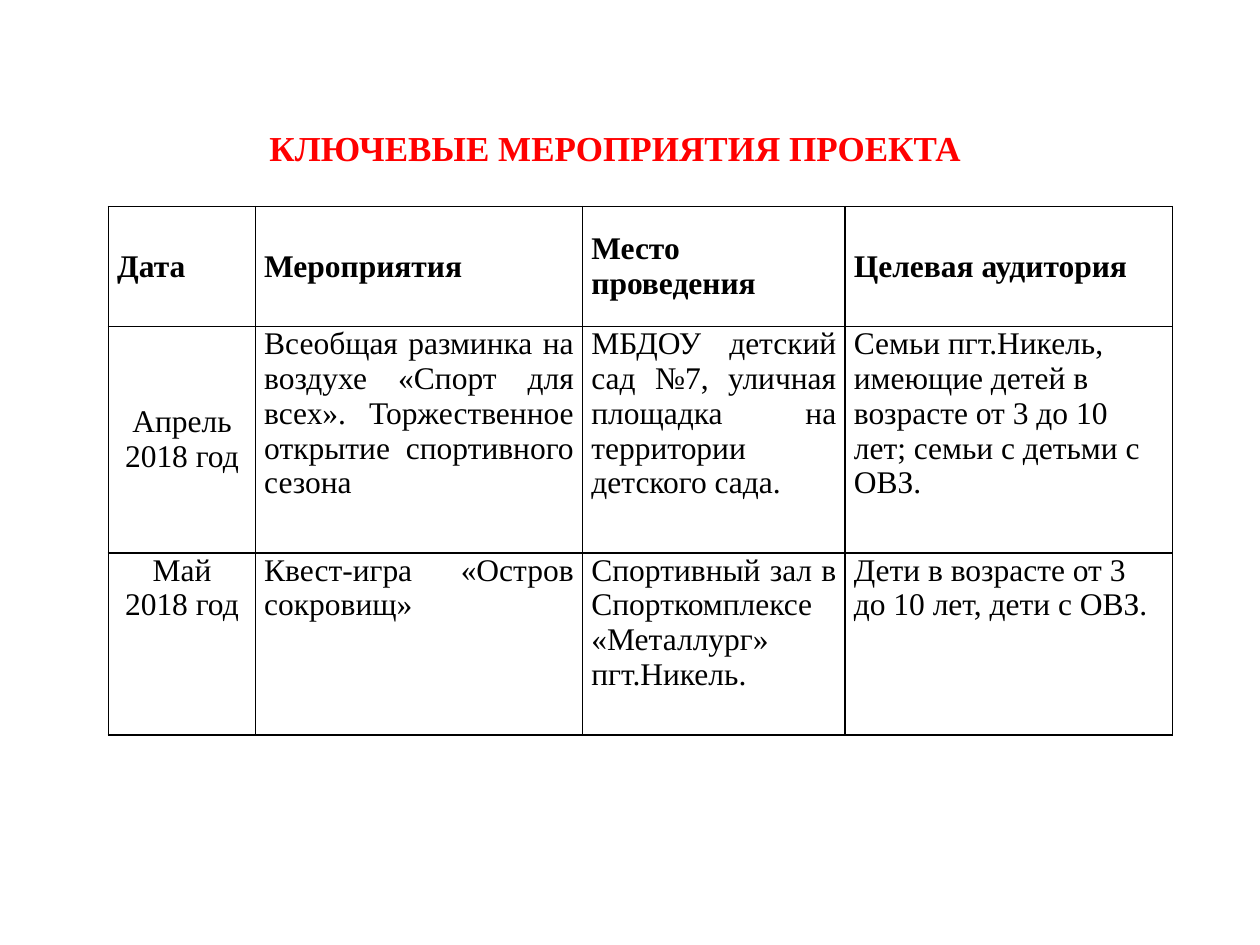
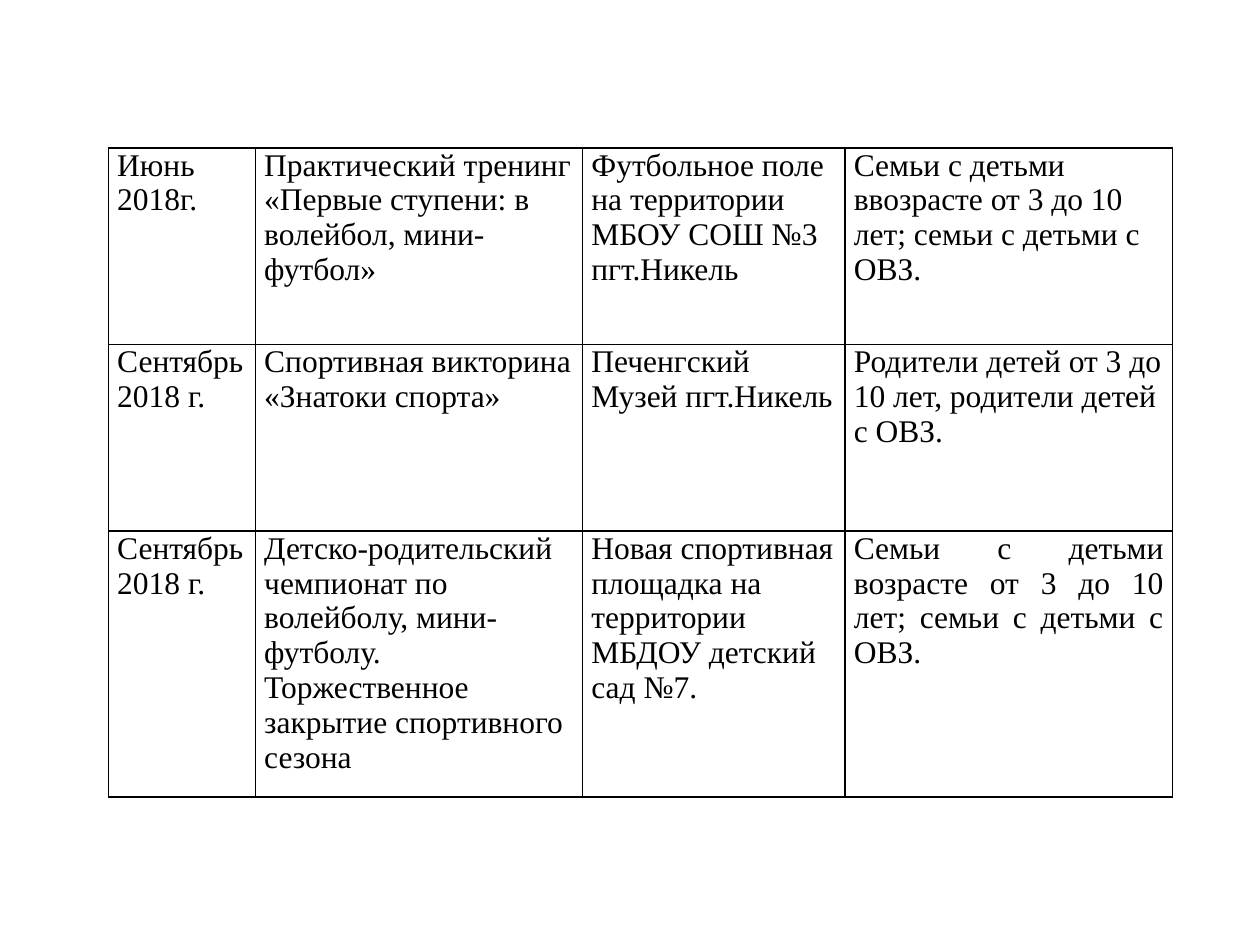
from pptx import Presentation
from pptx.dml.color import RGBColor
from pptx.enum.text import MSO_ANCHOR, PP_ALIGN
from pptx.oxml.ns import qn
from pptx.util import Pt
from lxml.etree import SubElement

LEFT, CENTER, JUSTIFY = PP_ALIGN.LEFT, PP_ALIGN.CENTER, PP_ALIGN.JUSTIFY
TOP, MIDDLE = MSO_ANCHOR.TOP, MSO_ANCHOR.MIDDLE


def color(value):
    return RGBColor.from_string(value)


class EventDeck:
    FONT = "Times New Roman"
    INK = "000000"
    ACCENT = "FF0000"
    TITLE_SIZE = 20
    BODY_SIZE = 18
    TABLE_LEFT = 62
    COLUMNS = (84, 187, 150, 187)
    CELL_INSET = 5
    BORDER = 1
    TITLE_ONLY, BLANK = 5, 6

    def __init__(self):
        self.deck = Presentation()
        self.deck.slide_width, self.deck.slide_height = Pt(720), Pt(540)
        self.slide = None

    def new_slide(self, layout):
        self.slide = self.deck.slides.add_slide(self.deck.slide_layouts[layout])

    def add_text(self, frame, text, size, ink, bold, align):
        for index, line in enumerate(text.split("\n")):
            paragraph = frame.add_paragraph() if index else frame.paragraphs[0]
            paragraph.alignment = align
            run = paragraph.add_run()
            run.text = line
            font = run.font
            font.name, font.size, font.bold = self.FONT, Pt(size), bold
            font.color.rgb = color(ink)

    def title(self, text, left, top, width, height):
        heading = self.slide.shapes.title
        heading.left, heading.top = Pt(left), Pt(top)
        heading.width, heading.height = Pt(width), Pt(height)
        frame = heading.text_frame
        frame.word_wrap = True
        frame.vertical_anchor = MIDDLE
        self.add_text(frame, text, self.TITLE_SIZE, self.ACCENT, True, CENTER)

    def outline(self, cell):
        properties = cell._tc.get_or_add_tcPr()
        for side in ("a:lnL", "a:lnR", "a:lnT", "a:lnB"):
            line = SubElement(properties, qn(side), w=str(Pt(self.BORDER)))
            fill = SubElement(line, qn("a:solidFill"))
            SubElement(fill, qn("a:srgbClr"), val=self.INK)

    def fill_cell(self, cell, text, align, anchor, bold):
        self.outline(cell)
        cell.fill.background()
        cell.margin_left = cell.margin_right = Pt(self.CELL_INSET)
        cell.margin_top = cell.margin_bottom = Pt(0)
        cell.vertical_anchor = anchor
        self.add_text(cell.text_frame, text, self.BODY_SIZE, self.INK, bold, align)

    def table(self, top, heights, events, aligns, middle=(), has_header=False):
        grid = self.slide.shapes.add_table(
            len(events), len(self.COLUMNS), Pt(self.TABLE_LEFT), Pt(top),
            Pt(sum(self.COLUMNS)), Pt(sum(heights))).table
        grid.first_row = has_header
        grid.horz_banding = False
        for column, width in zip(grid.columns, self.COLUMNS):
            column.width = Pt(width)
        for r, (height, event) in enumerate(zip(heights, events)):
            grid.rows[r].height = Pt(height)
            for c, text in enumerate(event):
                anchor = MIDDLE if (r, c) in middle else TOP
                bold = has_header and r == 0
                self.fill_cell(grid.cell(r, c), text, aligns[r][c], anchor, bold)


SPRING_EVENTS = [
    ("Дата", "Мероприятия", "Место\nпроведения", "Целевая аудитория"),
    ("Апрель 2018 год",
     "Всеобщая разминка на воздухе «Спорт для всех». "
     "Торжественное открытие спортивного сезона",
     "МБДОУ детский сад №7, уличная площадка на территории детского сада.",
     "Семьи пгт.Никель, имеющие детей в возрасте от 3 до 10 лет; "
     "семьи с детьми с ОВЗ."),
    ("Май 2018 год",
     "Квест-игра «Остров сокровищ»",
     "Спортивный зал в Спорткомплексе «Металлург» пгт.Никель.",
     "Дети в возрасте от 3 до 10 лет, дети с ОВЗ."),
]

LATER_EVENTS = [
    ("Июнь 2018г.",
     "Практический тренинг «Первые ступени: в волейбол, мини-футбол»",
     "Футбольное поле на территории МБОУ СОШ №3 пгт.Никель",
     "Семьи с детьми ввозрасте от 3 до 10 лет; семьи с детьми с ОВЗ."),
    ("Сентябрь 2018 г.",
     "Спортивная викторина «Знатоки спорта»",
     "Печенгский Музей пгт.Никель",
     "Родители детей от 3 до 10 лет, родители детей с ОВЗ."),
    ("Сентябрь 2018 г.",
     "Детско-родительский чемпионат по волейболу, мини-футболу.\n"
     "Торжественное закрытие спортивного сезона",
     "Новая спортивная площадка на территории МБДОУ детский сад №7.",
     "Семьи с детьми возрасте от 3 до 10 лет; семьи с детьми с ОВЗ."),
]


def main():
    all_left = (LEFT,) * 4
    spring_row = (CENTER, JUSTIFY, JUSTIFY, LEFT)
    closing_row = (LEFT, LEFT, LEFT, JUSTIFY)
    header_and_april = [(0, c) for c in range(4)] + [(1, 0)]

    events = EventDeck()
    events.new_slide(events.TITLE_ONLY)
    events.title("КЛЮЧЕВЫЕ МЕРОПРИЯТИЯ ПРОЕКТА", 118, 68, 467, 32)
    events.table(118, (68.5, 129.5, 104), SPRING_EVENTS,
                 (all_left, spring_row, spring_row), header_and_april, True)

    events.new_slide(events.BLANK)
    events.table(84.5, (112.5, 106.5, 152), LATER_EVENTS,
                 (all_left, all_left, closing_row))
    events.deck.save("out.pptx")


if __name__ == "__main__":
    main()
